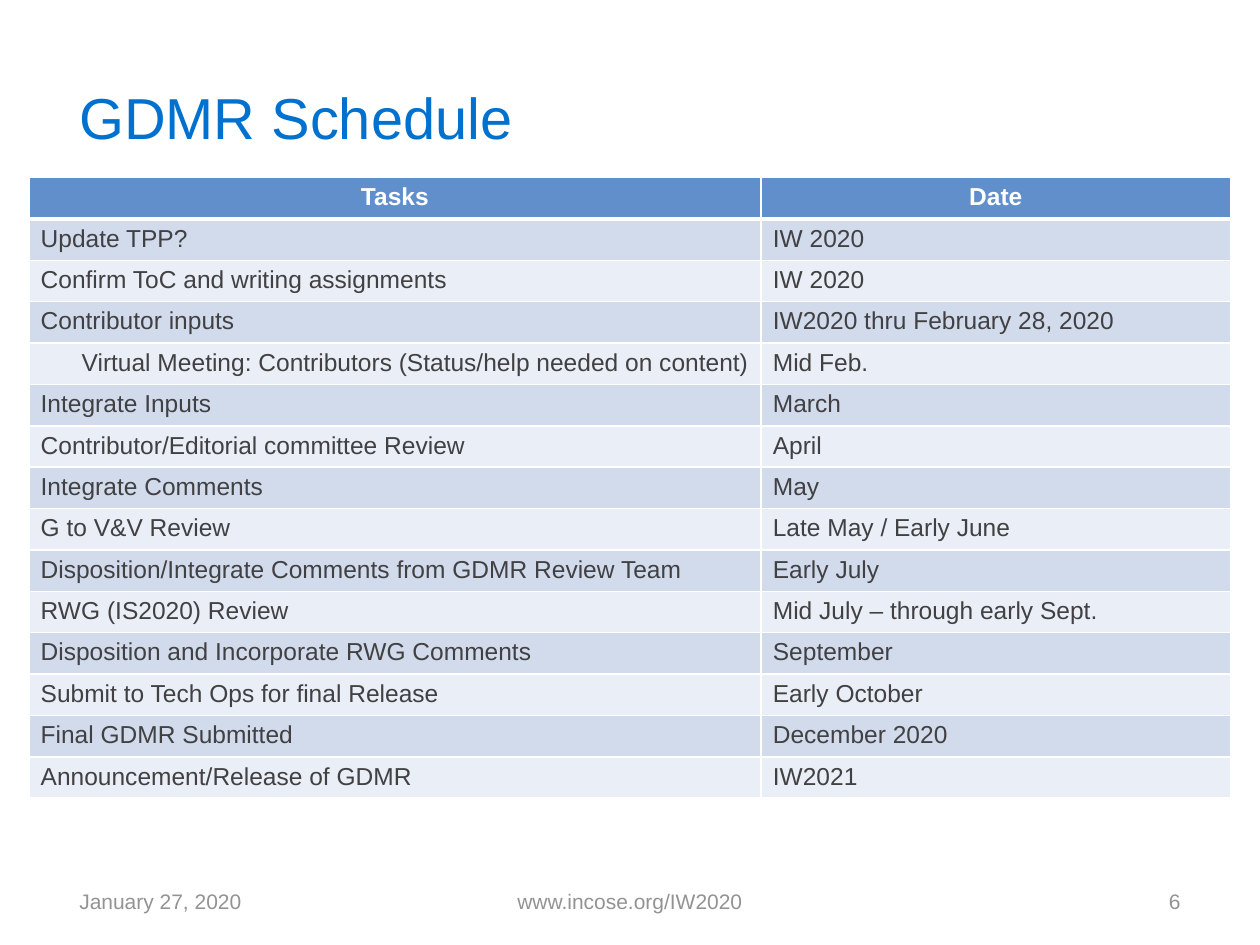
"""Build the GDMR schedule slide: a title, a task table and a footer."""
from dataclasses import dataclass
from typing import NamedTuple

from lxml.etree import SubElement
from pptx import Presentation
from pptx.dml.color import RGBColor
from pptx.enum.text import MSO_ANCHOR as Anchor, PP_ALIGN as Align
from pptx.oxml.ns import qn
from pptx.util import Cm, Pt


@dataclass(frozen=True)
class Theme:
    font: str = "Arial"
    title: str = "0071CE"
    header: str = "618FCB"
    bands: tuple[str, str] = ("D2DBEC", "EAEEF6")
    body: str = "414042"
    footer: str = "939393"
    white: str = "FFFFFF"
    title_size: int = 33
    table_size: int = 14
    footer_size: int = 12
    thin: int = 1
    thick: int = 3


class Label(NamedTuple):
    text: str
    left: float
    top: float
    width: float
    height: float
    size: int
    color: str
    align: Align = Align.LEFT


class Task(NamedTuple):
    name: str
    date: str
    align: Align = Align.LEFT


THEME = Theme()
COLUMN_WIDTHS = (14.76, 9.47)
ROW_HEIGHT = 0.71
BOX_MARGINS = {"margin_left": 0.33, "margin_right": 0.33, "margin_top": 0.17, "margin_bottom": 0.17}
CELL_MARGINS = {"margin_left": 0.24, "margin_right": 0.24, "margin_top": 0.12, "margin_bottom": 0.12}

FOOTER = {"top": 17.65, "height": 1.02, "size": THEME.footer_size, "color": THEME.footer}
LABELS = (
    Label("GDMR Schedule", 1.27, 0.76, 22.86, 3.18, THEME.title_size, THEME.title),
    Label("January 27, 2020", left=1.27, width=5.92, **FOOTER),
    Label("www.incose.org/IW2020", left=8.68, width=8.04, align=Align.CENTER, **FOOTER),
    Label("6", left=18.21, width=5.92, align=Align.RIGHT, **FOOTER),
)
TASKS = (
    Task("Update TPP?", "IW 2020"),
    Task("Confirm ToC and writing assignments", "IW 2020"),
    Task("Contributor inputs", "IW2020 thru February 28, 2020"),
    Task("Virtual Meeting: Contributors (Status/help needed on content)", "Mid Feb.", Align.RIGHT),
    Task("Integrate Inputs", "March"),
    Task("Contributor/Editorial committee Review", "April"),
    Task("Integrate Comments", "May"),
    Task("G to V&V Review", "Late May / Early June"),
    Task("Disposition/Integrate Comments from GDMR Review Team", "Early July"),
    Task("RWG (IS2020) Review", "Mid July – through early Sept."),
    Task("Disposition and Incorporate RWG Comments", "September"),
    Task("Submit to Tech Ops for final Release", "Early October"),
    Task("Final GDMR Submitted", "December 2020"),
    Task("Announcement/Release of GDMR", "IW2021"),
)


def set_margins(target, margins: dict[str, float]) -> None:
    for name, value in margins.items():
        setattr(target, name, Cm(value))


def write(para, text: str, size: int, color: str, align: Align, bold: bool = False) -> None:
    para.alignment = align
    span = para.add_run()
    span.text = text
    for name, value in {"name": THEME.font, "size": Pt(size), "bold": bold}.items():
        setattr(span.font, name, value)
    span.font.color.rgb = RGBColor.from_string(color)


def draw_label(slide, label: Label) -> None:
    place = (Cm(value) for value in (label.left, label.top, label.width, label.height))
    frame = slide.shapes.add_textbox(*place).text_frame
    frame.word_wrap = True
    frame.vertical_anchor = Anchor.MIDDLE
    set_margins(frame, BOX_MARGINS)
    write(frame.paragraphs[0], label.text, label.size, label.color, label.align)


def set_borders(cell, top: int, bottom: int) -> None:
    properties = cell._tc.get_or_add_tcPr()
    widths = {"a:lnL": THEME.thin, "a:lnR": THEME.thin, "a:lnT": top, "a:lnB": bottom}
    for tag, width in widths.items():
        line = SubElement(properties, qn(tag), w=str(Pt(width)))
        SubElement(SubElement(line, qn("a:solidFill")), qn("a:srgbClr"), val=THEME.white)


def draw_cell(cell, row: int, text: str, align: Align) -> None:
    header = row == 0
    set_margins(cell, CELL_MARGINS)
    set_borders(
        cell,
        top=THEME.thick if row == 1 else THEME.thin,
        bottom=THEME.thick if header else THEME.thin,
    )
    cell.fill.solid()
    cell.fill.fore_color.rgb = RGBColor.from_string(
        THEME.header if header else THEME.bands[(row - 1) % 2]
    )
    color = THEME.white if header else THEME.body
    write(cell.text_frame.paragraphs[0], text, THEME.table_size, color, align, header)


def draw_schedule(slide, tasks: tuple[Task, ...]) -> None:
    rows = [("Tasks", Align.CENTER, "Date", Align.CENTER)]
    rows += [(task.name, task.align, task.date, Align.LEFT) for task in tasks]
    table = slide.shapes.add_table(
        len(rows), len(COLUMN_WIDTHS), Cm(0.58), Cm(3.58),
        Cm(sum(COLUMN_WIDTHS)), Cm(ROW_HEIGHT * len(rows)),
    ).table
    for column, width in zip(table.columns, COLUMN_WIDTHS):
        column.width = Cm(width)
    for index, (name, name_align, date, date_align) in enumerate(rows):
        table.rows[index].height = Cm(ROW_HEIGHT)
        draw_cell(table.cell(index, 0), index, name, name_align)
        draw_cell(table.cell(index, 1), index, date, date_align)


def main() -> None:
    deck = Presentation()
    deck.slide_width, deck.slide_height = Cm(25.4), Cm(19.05)
    slide = deck.slides.add_slide(deck.slide_layouts[6])
    title, *footers = LABELS
    draw_label(slide, title)
    draw_schedule(slide, TASKS)
    for footer in footers:
        draw_label(slide, footer)
    deck.save("out.pptx")


if __name__ == "__main__":
    main()
